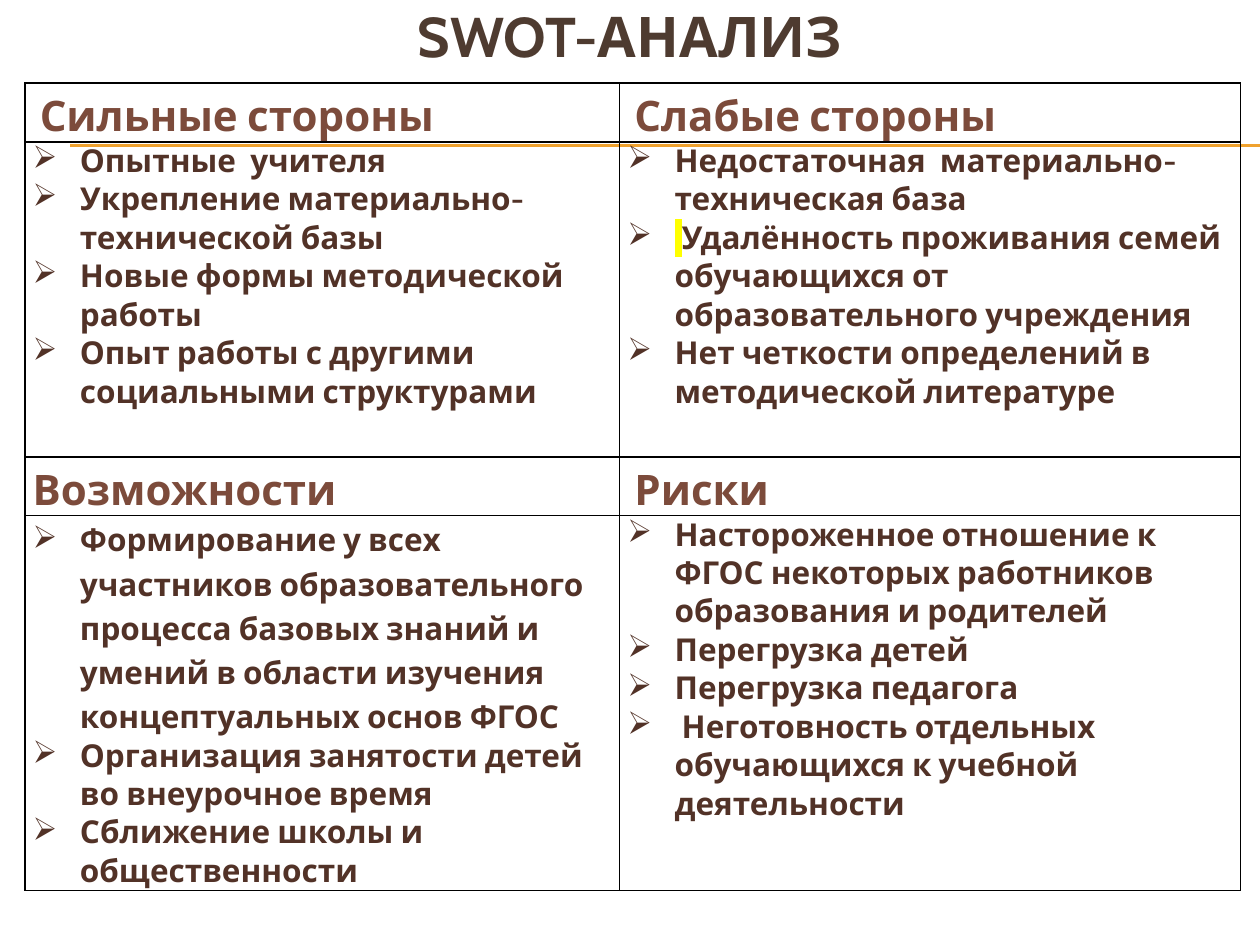
from dataclasses import dataclass

from lxml import etree
from pptx import Presentation
from pptx import util as u
from pptx.dml.color import RGBColor
from pptx.enum import shapes, text
from pptx.oxml import ns

FONT = "Cabin"
COLORS = {
    "title": "4E3B30",
    "heading": "7C4B3B",
    "body": "523227",
    "border": "000000",
    "rule": "F0A22E",
    "mark": "FFFF00",
}


@dataclass(frozen=True)
class Run:
    text: str
    size: float = 18
    color: str = "body"
    highlight: str = ""


@dataclass(frozen=True)
class Para:
    runs: tuple[Run, ...]
    spacing: float | None = None
    bullet: bool = False
    tab: float = 0


def heading(words: str, lead: str = "", lead_color: str = "heading") -> list[Para]:
    runs = (Run(lead, 18, lead_color),) if lead else ()
    return [Para(runs + (Run(words, 24, "heading"),), spacing=1.15)]


def item(*runs: Run, spacing: float | None = None, tab: float = 0) -> Para:
    return Para(runs, spacing, True, tab)


def items(*lines: str) -> list[Para]:
    return [item(Run(line)) for line in lines]


SWOT = [
    [heading("Сильные стороны", " "), heading("Слабые стороны", " ")],
    [
        items(
            "Опытные  учителя",
            "Укрепление материально-технической базы",
            "Новые формы методической работы",
            "Опыт работы с другими социальными структурами",
        ),
        [
            item(Run("Недостаточная  материально-техническая база")),
            item(
                Run(" ", highlight="mark"),
                Run("Удалённость проживания семей обучающихся от образовательного учреждения"),
            ),
            item(Run("Нет четкости определений в методической литературе")),
        ],
    ],
    [heading("Возможности"), heading("Риски", " ", "border")],
    [
        [
            item(
                Run(
                    "Формирование у всех участников образовательного процесса "
                    "базовых знаний и умений в области изучения "
                    "концептуальных основ ФГОС"
                ),
                spacing=1.15,
                tab=36,
            ),
            *items(
                "Организация занятости детей во внеурочное время",
                "Сближение школы и общественности",
            ),
        ],
        items(
            "Настороженное отношение к ФГОС некоторых работников образования и родителей",
            "Перегрузка детей",
            "Перегрузка педагога",
            " Неготовность отдельных обучающихся к учебной деятельности",
        ),
    ],
]
COL_WIDTHS = (339.8, 355)
ROW_HEIGHTS = (21, 180, 21, 175)


def rgb(name: str) -> RGBColor:
    return RGBColor.from_string(COLORS[name])


def add_solid(parent, name: str):
    fill = etree.SubElement(parent, ns.qn("a:solidFill"))
    etree.SubElement(fill, ns.qn("a:srgbClr"), val=COLORS[name])


def add_run(p, run: Run) -> None:
    r = p.add_run()
    r.text = run.text
    r.font.size = u.Pt(run.size)
    r.font.bold = True
    r.font.color.rgb = rgb(run.color)
    r.font.name = FONT
    if run.highlight:
        mark = etree.Element(ns.qn("a:highlight"))
        etree.SubElement(mark, ns.qn("a:srgbClr"), val=COLORS[run.highlight])
        r.font._element.find(ns.qn("a:solidFill")).addnext(mark)


def add_para(p, para: Para) -> None:
    if para.spacing:
        p.line_spacing = para.spacing
    if para.bullet:
        pPr = p._p.get_or_add_pPr()
        pPr.set("marL", str(u.Pt(27)))
        pPr.set("indent", str(-u.Pt(27)))
        etree.SubElement(pPr, ns.qn("a:buChar"), char="➢")
        if para.tab:
            tabs = etree.SubElement(pPr, ns.qn("a:tabLst"))
            etree.SubElement(tabs, ns.qn("a:tab"), pos=str(u.Pt(para.tab)), algn="l")
    for run in para.runs:
        add_run(p, run)


def fill_cell(cell, paras: list[Para]) -> None:
    cell.margin_left = cell.margin_right = u.Pt(4.5)
    cell.margin_top = cell.margin_bottom = 0
    cell.fill.background()
    tcPr = cell._tc.get_or_add_tcPr()
    for i, side in enumerate(("lnL", "lnR", "lnT", "lnB")):
        ln = etree.Element(ns.qn(f"a:{side}"), w=str(u.Pt(1)))
        add_solid(ln, "border")
        tcPr.insert(i, ln)
    tf = cell.text_frame
    for i, para in enumerate(paras):
        add_para(tf.add_paragraph() if i else tf.paragraphs[0], para)


def add_rule(s, y: float) -> None:
    sp = s.shapes.add_connector(
        shapes.MSO_CONNECTOR.STRAIGHT, u.Pt(40.3), u.Pt(y), u.Pt(720), u.Pt(y)
    )
    sp.line.color.rgb = rgb("rule")
    sp.line.width = u.Pt(0.75)
    etree.SubElement(sp._element.spPr, ns.qn("a:effectLst"))


def add_title(s, words: str) -> None:
    sp = s.shapes.title
    sp.left, sp.top, sp.width, sp.height = (u.Pt(v) for v in (36, -16.5, 648, 73.5))
    tf = sp.text_frame
    tf.vertical_anchor = text.MSO_ANCHOR.MIDDLE
    p = tf.paragraphs[0]
    p.alignment = text.PP_ALIGN.CENTER
    add_run(p, Run(words, 32, "title"))


def add_swot_table(s) -> None:
    sp = s.shapes.add_table(
        len(SWOT), len(COL_WIDTHS), u.Pt(14.2), u.Pt(47.5), u.Pt(sum(COL_WIDTHS)), u.Pt(456.5)
    )
    tbl = sp.table
    tbl.first_row = tbl.horz_banding = False
    for col, width in zip(tbl.columns, COL_WIDTHS):
        col.width = u.Pt(width)
    for row, height, contents in zip(tbl.rows, ROW_HEIGHTS, SWOT):
        row.height = u.Pt(height)
        for cell, paras in zip(row.cells, contents):
            fill_cell(cell, paras)
    sp.height = u.Pt(456.5)


def main() -> None:
    prs = Presentation()
    prs.slide_width, prs.slide_height = u.Pt(720), u.Pt(540)
    s = prs.slides.add_slide(prs.slide_layouts[5])
    for y in (82.8, 83.5):
        add_rule(s, y)
    add_title(s, "SWOT-АНАЛИЗ")
    add_swot_table(s)
    prs.save("out.pptx")


if __name__ == "__main__":
    main()
